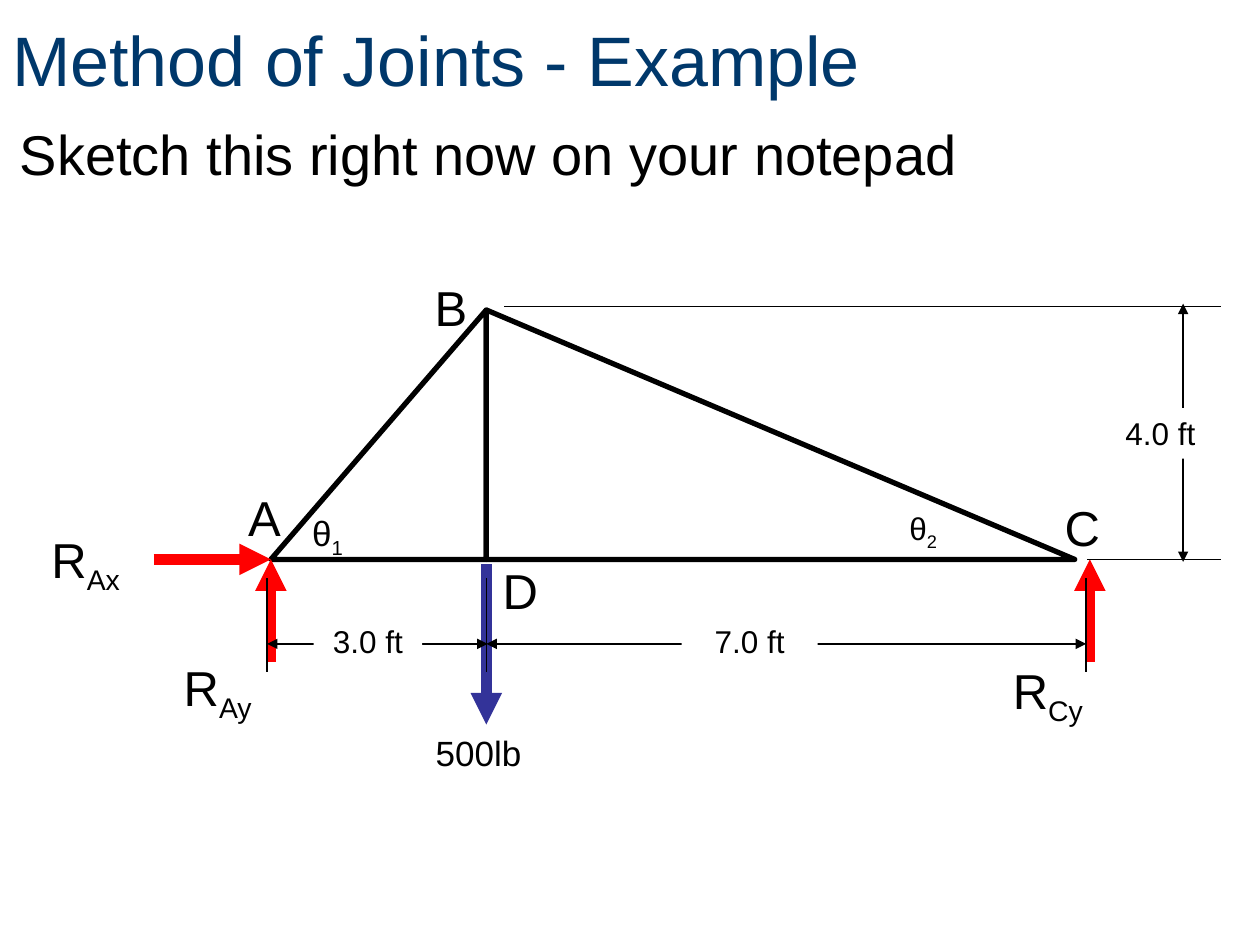
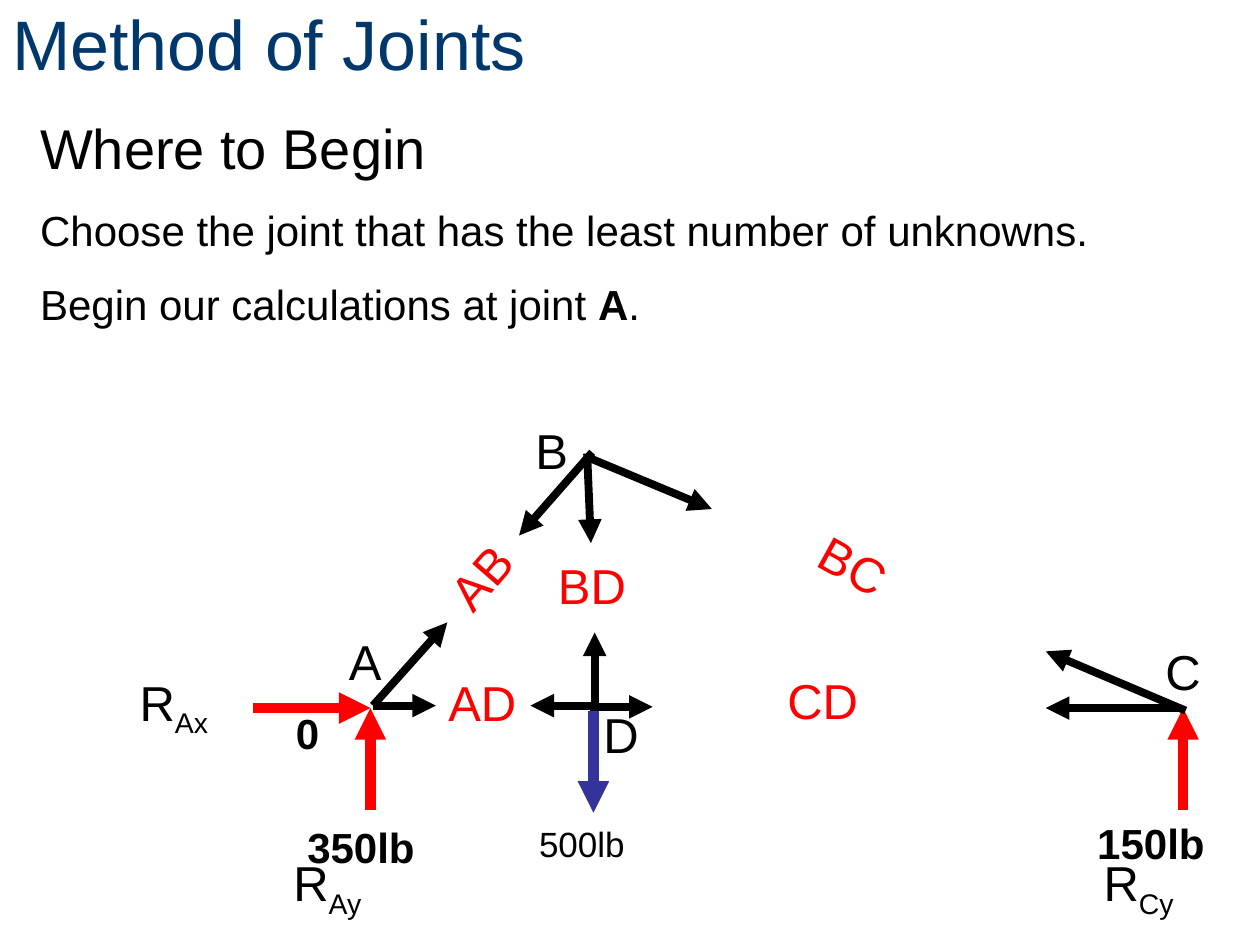
from dataclasses import dataclass
from typing import Any

from pptx import Presentation
from pptx.dml.color import RGBColor
from pptx.enum.shapes import MSO_CONNECTOR, MSO_SHAPE
from pptx.enum.text import MSO_ANCHOR, MSO_AUTO_SIZE, PP_ALIGN
from pptx.oxml.ns import qn
from pptx.slide import Slide
from pptx.util import Pt
from lxml.etree import SubElement

SCALE = 9144
FONT = "Arial"
HUES = {
    "ink": "000000",
    "title": "00386B",
    "force": "FF0000",
    "load": "333399",
    "paper": "FFFFFF",
}


@dataclass
class Run:
    text: str
    size: int = 28
    hue: str = "ink"
    bold: bool = False
    sub: bool = False


@dataclass
class Label:
    left: int
    top: int
    width: int
    height: int
    rows: list[list[Run]]
    turn: float = 0
    title: bool = False
    plate: bool = False


@dataclass
class Line:
    start: tuple[int, int]
    end: tuple[int, int]
    hue: str = "ink"
    weight: float = 0.75
    ends: tuple[str, ...] = ()


def px(*sizes: int) -> list[int]:
    return [size * SCALE for size in sizes]


def tint(name: str) -> RGBColor:
    return RGBColor.from_string(HUES[name])


def style(target: Any, values: dict[str, Any]) -> None:
    for name, value in values.items():
        setattr(target, name, value)


def draw_line(slide: Slide, line: Line) -> None:
    link = slide.shapes.add_connector(MSO_CONNECTOR.STRAIGHT, *px(*line.start, *line.end))
    link.line.color.rgb = tint(line.hue)
    link.line.width = Pt(line.weight)
    props = link.element.spPr
    for end in line.ends:
        SubElement(props.find(qn("a:ln")), qn(f"a:{end}"), type="triangle")
    SubElement(props, qn("a:effectLst"))


def draw_label(slide: Slide, label: Label) -> None:
    box = px(label.left, label.top, label.width, label.height)
    if label.plate:
        shape = slide.shapes.add_shape(MSO_SHAPE.RECTANGLE, *box)
        shape.shadow.inherit = False
        shape.fill.solid()
        shape.fill.fore_color.rgb = tint("paper")
        shape.line.fill.background()
    else:
        shape = slide.shapes.add_textbox(*box)
    shape.rotation = label.turn
    frame = shape.text_frame
    style(frame, {
        "word_wrap": True,
        "vertical_anchor": MSO_ANCHOR.MIDDLE if label.title else MSO_ANCHOR.TOP,
        "auto_size": MSO_AUTO_SIZE.NONE if label.title else MSO_AUTO_SIZE.SHAPE_TO_FIT_TEXT,
    })
    for index, row in enumerate(label.rows):
        para = frame.add_paragraph() if index else frame.paragraphs[0]
        style(para, {
            "alignment": PP_ALIGN.CENTER if label.plate else PP_ALIGN.LEFT,
            "space_before": Pt(13.5 if index else 0),
        })
        for part in row:
            run = para.add_run()
            run.text = part.text
            style(run.font, {"name": FONT, "size": Pt(part.size), "bold": part.bold})
            run.font.color.rgb = tint(part.hue)
            if part.sub:
                run.font._element.set("baseline", "-25000")


def draw_title(slide: Slide, text: str, height: int) -> None:
    draw_label(slide, Label(0, 0, 900, height, [[Run(text, 40, "title")]], title=True))


def draw_sub(slide: Slide, left: int, top: int, width: int, height: int,
             base: str, sub: str, size: int = 28) -> None:
    row = [Run(base, size), Run(sub, size, sub=True)]
    draw_label(slide, Label(left, top, width, height, [row]))


def draw_joints(slide: Slide, right: int = 0, down: int = 0) -> None:
    spots = {"C": (835, 390), "A": (187, 382), "D": (389, 440), "B": (335, 215)}
    for name, (left, top) in spots.items():
        draw_label(slide, Label(left + right, top + down, 42, 57, [[Run(name)]]))


def draw_forces(slide: Slide, level: int, a: int, c: int, d: int, top: int, tip: int) -> None:
    for start, end, hue in (
        ((d, top), (d, tip), "load"),
        ((a, level + 81), (a, level), "force"),
        ((c, level + 81), (c, level), "force"),
        ((a - 93, level), (a, level), "force"),
    ):
        draw_line(slide, Line(start, end, hue, 6, ("tailEnd",)))


def draw_truss(slide: Slide) -> None:
    for left, width, flip in ((386, 467, False), (215, 171, True)):
        shape = slide.shapes.add_shape(MSO_SHAPE.RIGHT_TRIANGLE, *px(left, 246, width, 198))
        shape.shadow.inherit = False
        shape.fill.background()
        shape.line.color.rgb = tint("ink")
        shape.line.width = Pt(3)
        if flip:
            shape.element.spPr.xfrm.set("flipH", "1")


def draw_sizes(slide: Slide) -> None:
    for x in (212, 386, 862):
        draw_line(slide, Line((x, 459), (x, 533)))
    draw_line(slide, Line((969, 243), (400, 243)))
    draw_line(slide, Line((863, 444), (969, 444)))
    for start, end in (
        ((212, 511), (387, 511)),
        ((386, 511), (862, 511)),
        ((939, 241), (939, 446)),
    ):
        draw_line(slide, Line(start, end, weight=1, ends=("headEnd", "tailEnd")))
    for left, top, width, text in (
        (249, 489, 86, "3.0 ft"),
        (541, 489, 108, "7.0 ft"),
        (875, 324, 92, "4.0 ft"),
    ):
        draw_label(slide, Label(left, top, width, 40, [[Run(text, 18)]], plate=True))


def build_sketch(slide: Slide) -> None:
    draw_title(slide, "Method of Joints - Example", 93)
    draw_label(slide, Label(6, 90, 772, 64, [[Run("Sketch this right now on your notepad", 32)]]))
    draw_truss(slide)
    draw_forces(slide, 444, a=215, c=865, d=386, top=448, tip=575)
    draw_sizes(slide)
    draw_joints(slide)
    draw_sub(slide, 31, 415, 122, 57, "R", "Ax")
    draw_sub(slide, 136, 517, 126, 57, "R", "Ay")
    draw_sub(slide, 794, 519, 120, 57, "R", "Cy")
    draw_sub(slide, 238, 401, 126, 43, "θ", "1", 20)
    draw_sub(slide, 712, 399, 134, 40, "θ", "2", 18)
    draw_label(slide, Label(336, 576, 105, 43, [[Run("500lb", 20)]]))


def build_start(slide: Slide) -> None:
    draw_title(slide, "Method of Joints", 68)
    draw_label(slide, Label(22, 85, 956, 185, [
        [Run("Where to Begin", 32)],
        [Run("Choose the joint that has the least number of unknowns.", 24)],
        [Run("Begin our calculations at joint ", 24), Run("A", 24, bold=True), Run(".", 24)],
    ]))
    for left, top, width, text in (
        (225, 557, 55, "0"),
        (861, 644, 139, "150lb"),
        (234, 647, 151, "350lb"),
    ):
        draw_label(slide, Label(left, top, width, 50, [[Run(text, 24, bold=True)]]))
    draw_forces(slide, 562, a=294, c=939, d=471, top=564, tip=645)
    for start, end in (
        ((296, 560), (355, 494)),
        ((296, 560), (346, 560)),
        ((471, 560), (421, 560)),
        ((468, 561), (518, 561)),
        ((937, 562), (830, 562)),
        ((472, 563), (472, 502)),
        ((470, 359), (412, 425)),
        ((466, 360), (469, 431)),
        ((469, 364), (565, 404)),
        ((941, 564), (830, 517)),
    ):
        draw_line(slide, Line(start, end, weight=4.5, ends=("tailEnd",)))
    draw_joints(slide, 80, 114)
    draw_sub(slide, 101, 529, 121, 57, "R", "Ax")
    draw_sub(slide, 223, 672, 129, 57, "R", "Ay")
    draw_sub(slide, 866, 672, 129, 57, "R", "Cy")
    draw_label(slide, Label(418, 648, 107, 43, [[Run("500lb", 20)]]))
    for text, left, top, width, turn in (
        ("AB", 341, 419, 99, 311.1),
        ("BC", 639, 426, 99, 28.9),
        ("AD", 346, 529, 103, 0),
        ("CD", 615, 527, 103, 0),
        ("BD", 433, 436, 103, 0),
    ):
        draw_label(slide, Label(left, top, width, 57, [[Run(text, hue="force")]], turn))


def main() -> None:
    deck = Presentation()
    wide, high = px(1000, 750)
    style(deck, {"slide_width": wide, "slide_height": high})
    for build in (build_sketch, build_start):
        build(deck.slides.add_slide(deck.slide_layouts[6]))
    deck.save("out.pptx")


if __name__ == "__main__":
    main()
